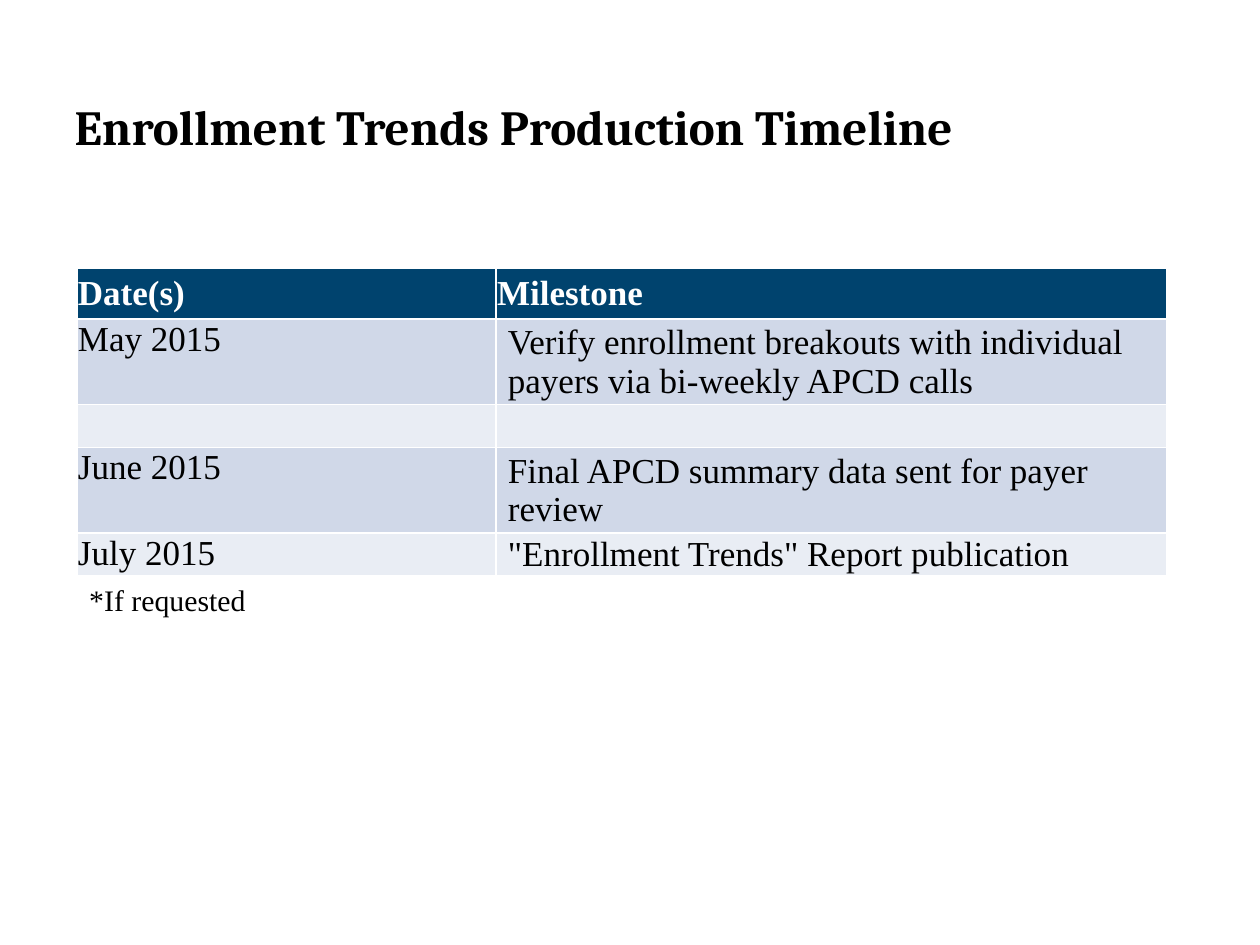
import pptx
import pptx.util
import pptx.dml.color
import pptx.enum.text
import pptx.oxml
import pptx.oxml.ns

Cm, Pt = pptx.util.Cm, pptx.util.Pt
RGB = pptx.dml.color.RGBColor.from_string
ANCHOR = pptx.enum.text.MSO_ANCHOR

COLORS = {"text": "000000", "white": "FFFFFF", "header": "00436E",
          "band_dark": "D0D8E8", "band_light": "E9EDF4"}
SERIF = "Times New Roman"


def add_run(p, text, size, font=SERIF, color="text", bold=False):
    r = p.add_run()
    r.text = text
    r.font.name = font
    r.font.size = Pt(size)
    r.font.bold = bold
    r.font.color.rgb = RGB(COLORS[color])


def add_border(cell, side, width):
    """Append one white cell border; call before setting the cell's fill."""
    cell._tc.get_or_add_tcPr().append(pptx.oxml.parse_xml(
        f'<a:ln{side} {pptx.oxml.ns.nsdecls("a")} w="{int(Pt(width))}"><a:solidFill>'
        f'<a:srgbClr val="{COLORS["white"]}"/></a:solidFill></a:ln{side}>'))


prs = pptx.Presentation()
prs.slide_width, prs.slide_height = Cm(25.4), Cm(19.05)
s = prs.slides.add_slide(prs.slide_layouts[5])

# Title
title = s.shapes.title
title.left, title.top, title.width, title.height = Cm(1.25), Cm(1.65), Cm(22.33), Cm(1.78)
tf = title.text_frame
tf.word_wrap = True
tf.vertical_anchor = ANCHOR.MIDDLE
p = tf.paragraphs[0]
p.alignment = pptx.enum.text.PP_ALIGN.LEFT
add_run(p, "Enrollment Trends Production Timeline", 28, "Cambria", bold=True)

# Timeline table
rows = [
    ("Date(s)", "Milestone"),
    ("May 2015", "Verify enrollment breakouts with individual payers via bi-weekly APCD calls"),
    ("", ""),
    ("June 2015", "Final APCD summary data sent for payer review"),
    ("July 2015", '"Enrollment Trends" Report publication'),
]
row_heights = [1.03, 1.72, 0.87, 1.72, 0.87]
col_widths = [8.45, 13.52]
fills = ["header", "band_dark", "band_light", "band_dark", "band_light"]

table = s.shapes.add_table(len(rows), len(col_widths), Cm(1.55), Cm(5.4),
                           Cm(sum(col_widths)), Cm(sum(row_heights))).table
for column, width in zip(table.columns, col_widths):
    column.width = Cm(width)
for i, texts in enumerate(rows):
    table.rows[i].height = Cm(row_heights[i])
    header = i == 0
    for j, text in enumerate(texts):
        cell = table.cell(i, j)
        cell.margin_left = Cm(0.02 if header or j == 0 else 0.24)
        cell.margin_top = cell.margin_right = Cm(0.02)
        cell.margin_bottom = 0
        cell.vertical_anchor = ANCHOR.MIDDLE if header or j == 1 else ANCHOR.TOP
        for side in "LRTB":
            under_header = (i, side) in [(0, "B"), (1, "T")]
            add_border(cell, side, 1.5 if under_header else 1)
        cell.fill.solid()
        cell.fill.fore_color.rgb = RGB(COLORS[fills[i]])
        if text:
            add_run(cell.text_frame.paragraphs[0], text, 20,
                    color="white" if header else "text", bold=header)

# Footnote
note = s.shapes.add_textbox(Cm(1.55), Cm(11.61), Cm(3.68), Cm(0.99))
tf = note.text_frame
tf.word_wrap = False
tf.auto_size = pptx.enum.text.MSO_AUTO_SIZE.SHAPE_TO_FIT_TEXT
add_run(tf.paragraphs[0], "*If requested", 17)

prs.save("out.pptx")
